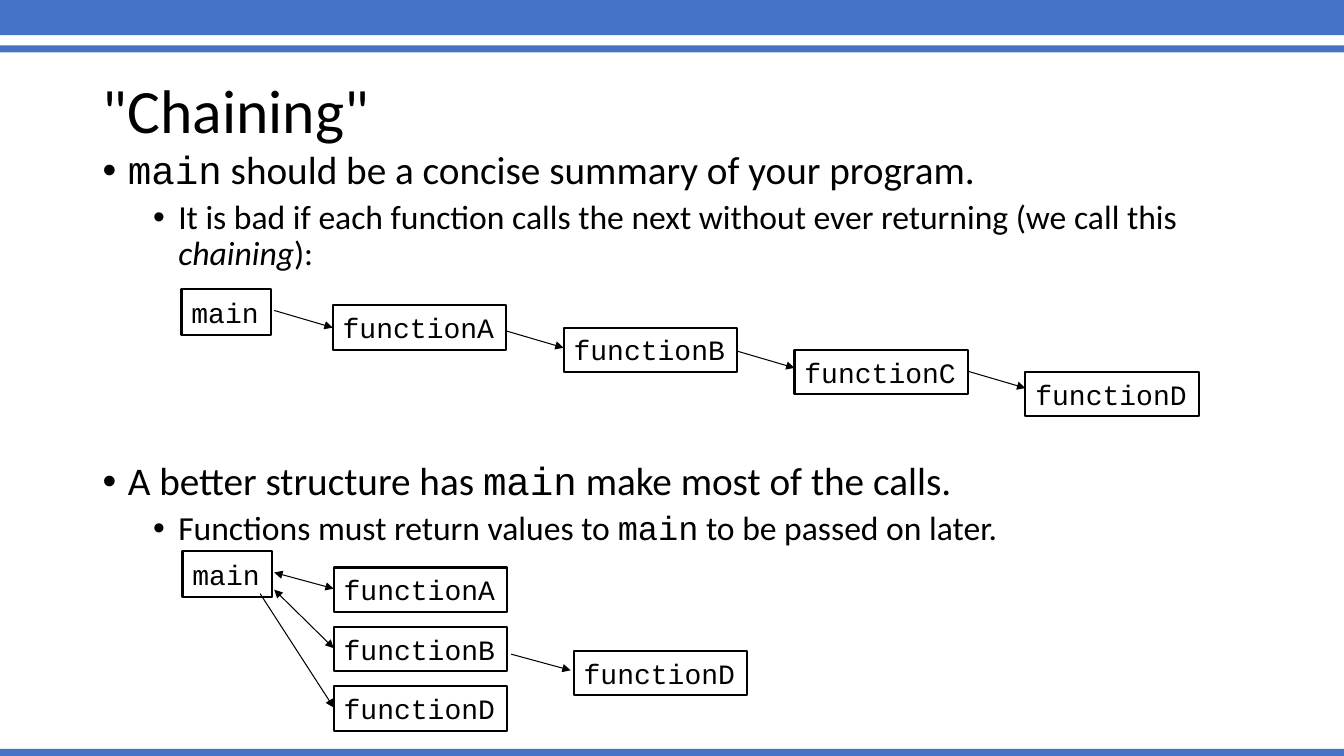
import pptx
import pptx.util
import pptx.dml.color
import pptx.enum.shapes
import pptx.enum.text
import pptx.oxml.ns
from dataclasses import dataclass
from lxml import etree

Inches = pptx.util.Inches
Pt = pptx.util.Pt
qn = pptx.oxml.ns.qn
Anchor = pptx.enum.text.MSO_ANCHOR
Align = pptx.enum.text.PP_ALIGN


@dataclass(frozen=True)
class Theme:
    accent: str = "4472C4"
    ink: str = "000000"
    prose: str = "Calibri"
    code: str = "Courier New"
    title_size: int = 44
    bullet_sizes: tuple = (28, 24)
    box_size: int = 20
    box_line: float = 1.5
    arrow_line: float = 0.75


def rgb(value):
    return pptx.dml.color.RGBColor.from_string(value)


def apply(target, formats):
    for name, value in formats.items():
        setattr(target, name, value)


class SlideBuilder:
    def __init__(self, deck, theme):
        self.theme = theme
        self.page = deck.slides.add_slide(deck.slide_layouts[5])

    def span(self, para, text, size, font, italic=False):
        span = para.add_run()
        span.text = text
        apply(span.font, {"size": Pt(size), "name": font, "italic": italic})
        span.font.color.rgb = rgb(self.theme.ink)

    def frame(self, shape, anchor, wrap=True):
        apply(shape.text_frame, {
            "word_wrap": wrap, "vertical_anchor": anchor,
            "auto_size": pptx.enum.text.MSO_AUTO_SIZE.NONE})
        return shape.text_frame

    def title(self, text, left, top, width, height):
        title = self.page.shapes.title
        apply(title, {"left": Inches(left), "top": Inches(top),
                      "width": Inches(width), "height": Inches(height)})
        para = self.frame(title, Anchor.MIDDLE).paragraphs[0]
        apply(para, {"alignment": Align.LEFT, "line_spacing": 0.9})
        self.span(para, text, self.theme.title_size, self.theme.prose)

    def bar(self, top, height):
        bar = self.page.shapes.add_shape(
            pptx.enum.shapes.MSO_SHAPE.RECTANGLE,
            0, Inches(top), Inches(13.33), Inches(height))
        bar.shadow.inherit = False
        bar.fill.solid()
        bar.fill.fore_color.rgb = rgb(self.theme.accent)
        bar.line.fill.background()

    def bullets(self, items, left, top, width, height):
        box = self.page.shapes.add_textbox(*map(Inches, (left, top, width, height)))
        frame = self.frame(box, Anchor.TOP)
        for index, (level, space, pieces) in enumerate(items):
            para = frame.paragraphs[0] if index == 0 else frame.add_paragraph()
            apply(para, {"level": level, "line_spacing": 0.9, "space_before": Pt(space)})
            props = para._p.get_or_add_pPr()
            props.set("marL", str(Inches(0.25 + 0.5 * level)))
            props.set("indent", str(Inches(-0.25)))
            etree.SubElement(props, qn("a:buFont")).set("typeface", "Arial")
            etree.SubElement(props, qn("a:buChar")).set("char", "•")
            for text, kind in pieces:
                font = self.theme.code if kind == "code" else self.theme.prose
                self.span(para, text, self.theme.bullet_sizes[level], font,
                          kind == "italic")

    def group(self):
        return self.page.shapes.add_group_shape()

    def function_box(self, group, name, left, top):
        width, height = (0.89, 0.45) if name == "main" else (1.72, 0.44)
        box = group.shapes.add_shape(
            pptx.enum.shapes.MSO_SHAPE.RECTANGLE,
            *map(Inches, (left, top, width, height)))
        box.shadow.inherit = False
        box.fill.background()
        box.line.color.rgb = rgb(self.theme.ink)
        box.line.width = Pt(self.theme.box_line)
        para = self.frame(box, Anchor.MIDDLE, wrap=False).paragraphs[0]
        para.alignment = Align.LEFT
        self.span(para, name, self.theme.box_size, self.theme.code)

    def arrow(self, group, start, end, both=False):
        arrow = group.shapes.add_connector(
            pptx.enum.shapes.MSO_CONNECTOR.STRAIGHT, *map(Inches, start + end))
        arrow.line.color.rgb = rgb(self.theme.ink)
        arrow.line.width = Pt(self.theme.arrow_line)
        for tag in ("a:headEnd", "a:tailEnd") if both else ("a:tailEnd",):
            etree.SubElement(arrow.line._ln, qn(tag)).set("type", "triangle")
        etree.SubElement(arrow._element.spPr, qn("a:effectLst"))


def main():
    deck = pptx.Presentation()
    apply(deck, {"slide_width": Inches(13.33), "slide_height": Inches(7.5)})
    slide = SlideBuilder(deck, Theme())

    # Bands at the top and bottom
    for top, height in ((0, 0.35), (0.45, 0.07), (7.43, 0.07)):
        slide.bar(top, height)

    # Title and bullets; the wide space leaves room for the chain diagram
    slide.title('"Chaining"', 0.92, 0.4, 11.5, 1.45)
    slide.bullets([
        (0, 0, [("main", "code"),
                (" should be a concise summary of your program.", "prose")]),
        (1, 5, [("It is bad if each function calls the next without ever "
                 "returning (we call this ", "prose"),
                ("chaining", "italic"), ("):", "prose")]),
        (0, 135, [("A better structure has ", "prose"), ("main", "code"),
                  (" make most of the calls.", "prose")]),
        (1, 5, [("Functions must return values to ", "prose"), ("main", "code"),
                (" to be passed on later.", "prose")]),
    ], 0.92, 1.45, 11.5, 5.3)

    # Chain: every function calls the next
    chain = slide.group()
    slide.function_box(chain, "main", 1.8, 2.87)
    for step, letter in enumerate("ABCD"):
        left, tip = 3.3 + 2.29 * step, 3.25 + 0.2 * step
        slide.arrow(chain, (left - 0.58, tip - 0.17), (left, tip))
        slide.function_box(chain, "function" + letter, left, 3.03 + 0.22 * step)

    # Better structure: main makes most of the calls
    calls = slide.group()
    slide.function_box(calls, "main", 1.81, 5.47)
    starts = ((2.72, 5.68), (2.72, 5.85), (2.58, 5.89))
    for row, (letter, start) in enumerate(zip("ABD", starts)):
        top = 5.63 + 0.59 * row
        slide.arrow(calls, start, (3.31, top + 0.21), both=letter != "D")
        slide.function_box(calls, "function" + letter, 3.31, top)
    slide.arrow(calls, (5.07, 6.49), (5.66, 6.65))
    slide.function_box(calls, "functionD", 5.69, 6.46)

    deck.save("out.pptx")


if __name__ == "__main__":
    main()
